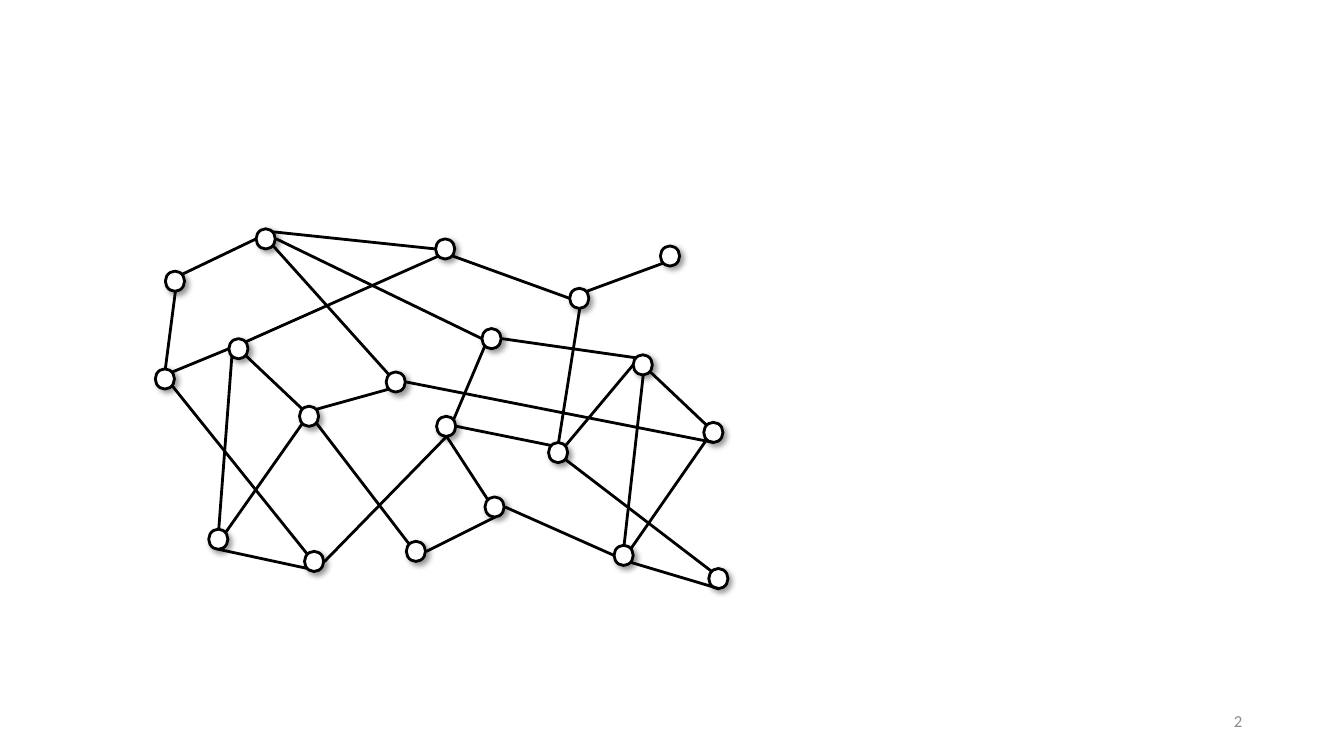
from dataclasses import dataclass

from lxml.etree import SubElement
from pptx import Presentation
from pptx.dml.color import RGBColor
from pptx.enum.shapes import MSO_CONNECTOR as Connector, MSO_SHAPE as Preset
from pptx.enum.text import MSO_ANCHOR as Anchor, PP_ALIGN as Align
from pptx.oxml.ns import qn
from pptx.util import Pt

# Scale: 100 px to the inch
PX = 9144
COLOURS = {"ink": "000000", "node": "FFFFFF", "number": "8C8C8C"}
NODE_WIDTH, NODE_HEIGHT, RADIUS, DIAGONAL = 19, 20, 10, 7

# Compass points on a node's rim, as offsets from its centre
RIM = {
    "N": (0, -RADIUS), "S": (0, RADIUS), "W": (-RADIUS, 0), "E": (RADIUS, 0),
    "NW": (-DIAGONAL, -DIAGONAL), "NE": (DIAGONAL, -DIAGONAL),
    "SW": (-DIAGONAL, DIAGONAL), "SE": (DIAGONAL, DIAGONAL),
}


@dataclass(frozen=True)
class Node:
    left: int
    top: int

    def rim(self, side: str) -> tuple[int, int]:
        across, down = RIM[side]
        return self.left + RADIUS + across, self.top + RADIUS + down


@dataclass(frozen=True)
class Edge:
    start: str
    start_side: str
    end: str
    end_side: str


NODES = {
    "A": Node(164, 269), "B": Node(254, 227), "C": Node(154, 366),
    "D": Node(207, 525), "E": Node(227, 336), "F": Node(478, 326),
    "G": Node(432, 237), "H": Node(302, 547), "I": Node(297, 403),
    "J": Node(383, 369), "K": Node(433, 413), "L": Node(403, 537),
    "M": Node(481, 493), "N": Node(565, 286), "O": Node(655, 244),
    "P": Node(544, 439), "Q": Node(609, 541), "R": Node(628, 352),
    "S": Node(703, 564), "T": Node(698, 419),
}

EDGES = [
    Edge("B", "NE", "G", "W"), Edge("B", "W", "A", "NE"),
    Edge("B", "SE", "J", "NW"), Edge("B", "E", "F", "W"),
    Edge("E", "SE", "I", "NW"), Edge("F", "SW", "K", "NE"),
    Edge("K", "S", "M", "NW"), Edge("M", "S", "L", "E"),
    Edge("I", "NE", "J", "SW"), Edge("I", "SE", "L", "NW"),
    Edge("C", "NE", "E", "W"), Edge("A", "S", "C", "N"),
    Edge("E", "SW", "D", "N"), Edge("D", "NE", "I", "SW"),
    Edge("E", "NE", "G", "SW"), Edge("H", "E", "K", "S"),
    Edge("H", "NW", "C", "SE"), Edge("D", "S", "H", "SW"),
    Edge("O", "SW", "N", "NE"), Edge("R", "SE", "T", "NW"),
    Edge("P", "NE", "R", "W"), Edge("N", "S", "P", "N"),
    Edge("R", "S", "Q", "N"), Edge("Q", "NE", "T", "SW"),
    Edge("S", "NW", "P", "SE"), Edge("Q", "SE", "S", "S"),
    Edge("G", "SE", "N", "W"), Edge("K", "E", "P", "NW"),
    Edge("M", "E", "Q", "W"), Edge("F", "E", "R", "NW"),
    Edge("J", "E", "T", "S"),
]


def colour(name: str) -> RGBColor:
    return RGBColor.from_string(COLOURS[name])


def set_format(target, values: dict) -> None:
    for name, value in values.items():
        setattr(target, name, value)


def ink_line(shape) -> None:
    shape.line.color.rgb = colour("ink")
    shape.line.width = Pt(2)


def add_shadow(shape) -> None:
    shape.shadow.inherit = False
    effects = shape.element.spPr.find(qn("a:effectLst"))
    shadow = SubElement(effects, qn("a:outerShdw"), blurRad=str(Pt(4)),
                        dist=str(Pt(3)), dir="2700000", algn="tl", rotWithShape="0")
    tint = SubElement(shadow, qn("a:srgbClr"), val=COLOURS["ink"])
    SubElement(tint, qn("a:alpha"), val="40000")


def draw_node(page, node: Node) -> None:
    lengths = (node.left, node.top, NODE_WIDTH, NODE_HEIGHT)
    circle = page.shapes.add_shape(Preset.OVAL, *(length * PX for length in lengths))
    circle.fill.solid()
    circle.fill.fore_color.rgb = colour("node")
    ink_line(circle)
    add_shadow(circle)


def draw_edge(page, edge: Edge) -> None:
    ends = NODES[edge.start].rim(edge.start_side) + NODES[edge.end].rim(edge.end_side)
    line = page.shapes.add_connector(Connector.STRAIGHT, *(length * PX for length in ends))
    ink_line(line)
    SubElement(line.element.spPr, qn("a:effectLst"))


def draw_page_number(page, text: str) -> None:
    box = page.shapes.add_textbox(942 * PX, 695 * PX, 300 * PX, 40 * PX)
    set_format(box.text_frame, {"word_wrap": True, "vertical_anchor": Anchor.MIDDLE})
    para = box.text_frame.paragraphs[0]
    para.alignment = Align.RIGHT
    span = para.add_run()
    span.text = text
    set_format(span.font, {"name": "Calibri", "size": Pt(12)})
    span.font.color.rgb = colour("number")


def main() -> None:
    deck = Presentation()
    set_format(deck, {"slide_width": 1333 * PX, "slide_height": 750 * PX})
    page = deck.slides.add_slide(deck.slide_layouts[6])

    # Graph
    for node in NODES.values():
        draw_node(page, node)
    for edge in EDGES:
        draw_edge(page, edge)

    # Footer
    draw_page_number(page, "2")
    deck.save("out.pptx")


if __name__ == "__main__":
    main()
